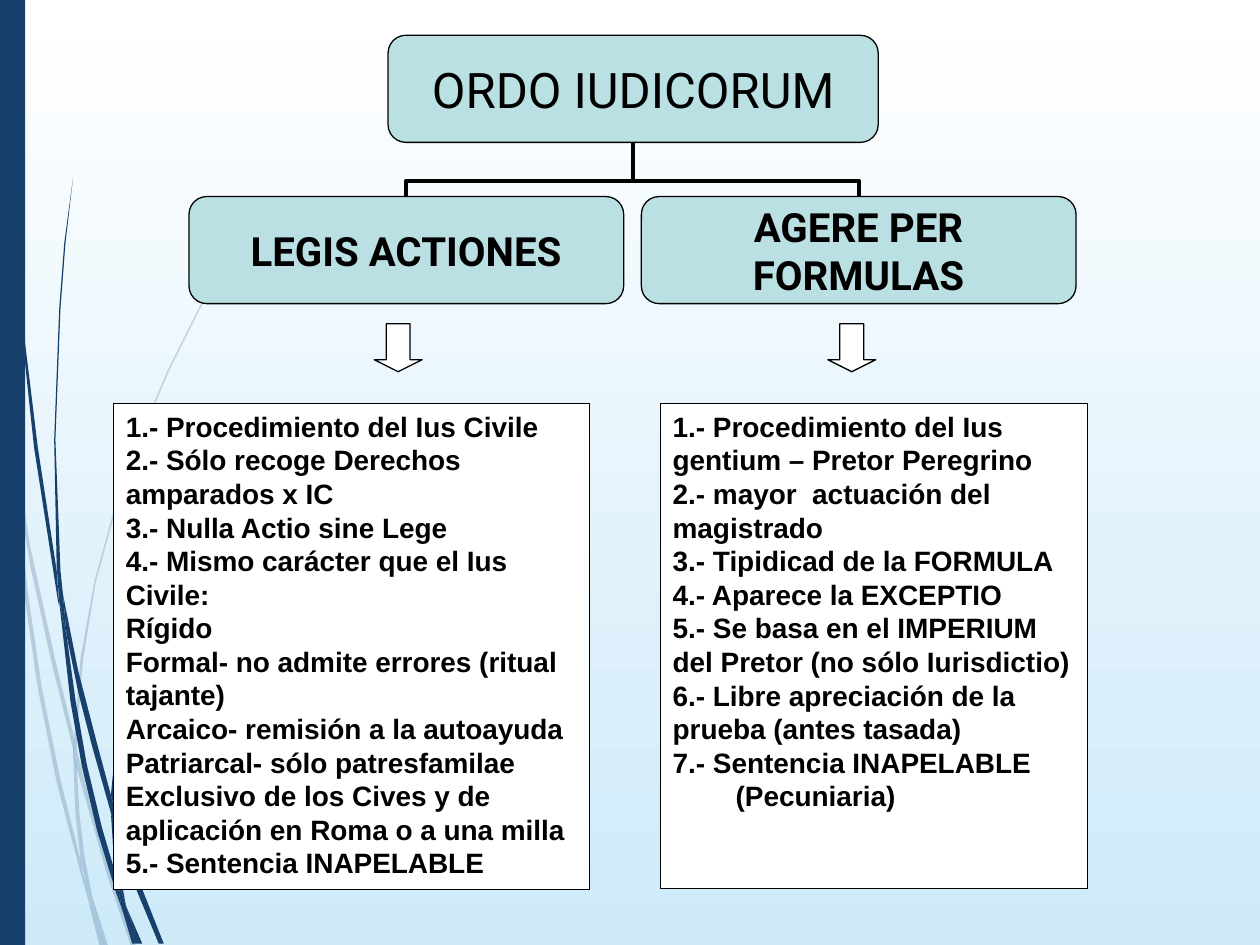
"""Build the Ordo Iudicorum slide: a two-branch chart with a list under each branch."""
from lxml import etree
from pptx import Presentation
from pptx import util as u
from pptx.dml import color
from pptx.enum import shapes, text
from pptx.oxml import ns

COLORS = {"navy": "17406D", "teal": "BBE0E3", "white": "FFFFFF", "black": "000000", "sky": "CEEAF9"}
RGB = {name: color.RGBColor.from_string(value) for name, value in COLORS.items()}
KIND = shapes.MSO_SHAPE

deck = Presentation()
deck.slide_width, deck.slide_height = u.Inches(10), u.Inches(7.5)
page = deck.slides.add_slide(deck.slide_layouts[6])

backdrop = page.background.fill
backdrop.gradient()
backdrop.gradient_angle = 270
for stop, name in zip(backdrop.gradient_stops, ("white", "sky")):
    stop.color.rgb = RGB[name]


def add_box(words, kind, area, fill="white", outline="black", size=16, font="Arial", bold=True,
            align=text.PP_ALIGN.LEFT, anchor=text.MSO_ANCHOR.TOP, margins=(0.1, 0.05)):
    box = page.shapes.add_shape(kind, *map(u.Inches, area))
    box.shadow.inherit = False
    box.fill.solid()
    box.fill.fore_color.rgb = RGB[fill]
    if outline:
        box.line.color.rgb = RGB[outline]
        box.line.width = u.Pt(0.75)
    else:
        box.line.fill.background()
    frame = box.text_frame
    frame.word_wrap = True
    frame.vertical_anchor = anchor
    frame.margin_left = frame.margin_right = u.Inches(margins[0])
    frame.margin_top = frame.margin_bottom = u.Inches(margins[1])
    for index, line in enumerate(words):
        para = frame.paragraphs[0] if index == 0 else frame.add_paragraph()
        para.alignment = align
        span = para.add_run()
        span.text = line
        span.font.size, span.font.name, span.font.bold = u.Pt(size), font, bold
        span.font.color.rgb = RGB["black"]
    return box


def add_ribbon(points, opacity):
    corners = [(u.Inches(x), u.Inches(y)) for x, y in points]
    builder = page.shapes.build_freeform(*corners[0])
    builder.add_line_segments(corners[1:], close=True)
    ribbon = builder.convert_to_shape()
    ribbon.shadow.inherit = False
    ribbon.line.fill.background()
    ribbon.fill.solid()
    ribbon.fill.fore_color.rgb = RGB["navy"]
    if opacity < 100:
        tint = ribbon._element.spPr.find(ns.qn("a:solidFill"))[0]
        etree.SubElement(tint, ns.qn("a:alpha"), val=str(opacity * 1000))


pale_ribbons = [
    [(0, 2.82), (0.06, 3.22), (0.08, 3.5), (0.07, 3.44), (0, 2.99)],
    [(0.1, 3.45), (0.24, 4.34), (0.43, 5.2), (0.59, 5.86), (0.59, 5.99), (0.4, 5.22), (0.24, 4.49), (0.12, 3.76)],
    [(0.61, 5.96), (0.64, 6.07), (0.75, 6.5), (0.88, 6.92), (1.08, 7.51), (1.04, 7.51), (0.85, 6.94), (0.61, 6.1)],
    [(0.73, 7.11), (0.86, 7.51), (0.83, 7.51)],
    [(0.08, 3.5), (0.12, 3.76), (0.22, 4.69), (0.33, 5.45), (0.48, 6.19), (0.64, 6.83), (0.69, 7.07),
     (0.7, 7.14), (0.64, 6.93), (0.45, 6.21), (0.3, 5.46), (0.19, 4.7)],
    [(0.58, 5.99), (0.61, 6.08), (0.63, 6.46), (0.67, 6.79), (0.73, 7.11), (0.67, 6.92), (0.64, 6.83), (0.6, 6.46)],
    [(0.59, 5.86), (0.59, 5.84), (0.64, 5.22), (0.75, 4.61), (0.91, 4.03), (1.1, 3.48), (1.33, 2.94), (1.58, 2.44),
     (1.86, 1.97), (2.17, 1.53), (1.87, 1.98), (1.59, 2.45), (1.34, 2.95), (1.11, 3.49), (0.92, 4.04),
     (0.76, 4.62), (0.66, 5.23), (0.61, 5.84), (0.61, 5.96)],
    [(0.7, 7.14), (0.82, 7.51), (0.79, 7.51)],
    [(0.59, 5.86), (0.61, 5.96), (0.61, 6.1), (0.58, 5.99)],
    [(0.65, 6.83), (0.67, 6.92), (0.73, 7.11), (0.83, 7.51), (0.82, 7.51), (0.7, 7.14)],
]
dark_ribbons = [
    [(0.02, 0), (0.03, 0), (0.04, 0.48), (0.06, 1.09), (0.15, 2.32), (0.3, 3.55), (0.45, 4.53), (0.47, 4.81),
     (0.46, 4.77), (0.27, 3.55), (0.14, 2.33), (0.05, 1.1), (0.03, 0.48)],
    [(0.5, 4.72), (0.62, 5.32), (0.77, 5.9), (0.88, 6.31), (0.88, 6.45), (0.73, 5.92), (0.62, 5.49), (0.53, 5.05)],
    [(0.91, 6.41), (0.94, 6.49), (1.13, 7.06), (1.3, 7.49), (1.26, 7.49), (1.09, 7.08), (0.91, 6.56)],
    [(0.47, 4.77), (0.53, 5.05), (0.6, 5.56), (0.69, 6.07), (0.81, 6.57), (0.91, 6.91), (0.97, 7.22),
     (0.92, 7.08), (0.77, 6.59), (0.65, 6.08), (0.56, 5.57)],
    [(0.49, 4.72), (0.45, 4.49), (0.43, 3.49), (0.47, 2.45), (0.51, 1.93), (0.58, 1.41), (0.52, 1.93),
     (0.48, 2.45), (0.44, 3.49), (0.48, 4.53), (0.5, 4.72)],
    [(1, 7.19), (1.13, 7.49), (1.1, 7.49)],
    [(0.45, 4.49), (0.5, 4.72), (0.53, 5.05), (0.47, 4.77)],
    [(0.88, 6.31), (0.92, 5.91), (1.01, 5.51), (1.14, 5.11), (1.29, 4.74), (1.48, 4.38), (1.68, 4.05),
     (1.91, 3.73), (2.16, 3.44), (1.91, 3.74), (1.69, 4.06), (1.49, 4.4), (1.31, 4.76), (1.16, 5.13),
     (1.03, 5.52), (0.94, 5.92), (0.91, 6.33), (0.91, 6.41)],
    [(0.97, 7.22), (1.08, 7.49), (1.05, 7.49)],
    [(0.88, 6.45), (0.91, 6.56), (0.94, 6.86), (1, 7.19), (0.91, 6.91)],
    [(0.88, 6.31), (0.91, 6.41), (0.91, 6.56), (0.88, 6.45)],
    [(0.91, 6.91), (1, 7.19), (1.1, 7.49), (1.08, 7.49), (0.97, 7.22)],
]
for ribbons, opacity in ((pale_ribbons, 20), (dark_ribbons, 100)):
    for points in ribbons:
        add_ribbon(points, opacity)
add_box([], KIND.RECTANGLE, (0, 0, 0.2, 7.5), fill="navy", outline=None)

node_format = dict(fill="teal", font="Roboto", align=text.PP_ALIGN.CENTER,
                   anchor=text.MSO_ANCHOR.MIDDLE, margins=(0.05, 0.03))
root = add_box(["ORDO IUDICORUM"], KIND.ROUNDED_RECTANGLE, (3.08, 0.28, 3.89, 0.85),
               size=28, bold=False, **node_format)

branches = [
    ("LEGIS ACTIONES", 1.5, 2.97, (0.9, 3.2, 3.78, 3.86), [
        "1.- Procedimiento del Ius Civile",
        "2.- Sólo recoge Derechos amparados x IC",
        "3.- Nulla Actio sine Lege",
        "4.- Mismo carácter que el Ius Civile:",
        "Rígido",
        "Formal- no admite errores (ritual tajante)",
        "Arcaico- remisión a la autoayuda",
        "Patriarcal- sólo patresfamilae",
        "Exclusivo de los Cives y de aplicación en Roma o a una milla",
        "5.- Sentencia INAPELABLE"]),
    ("AGERE PER FORMULAS", 5.09, 6.57, (5.24, 3.2, 3.39, 3.85), [
        "1.- Procedimiento del Ius gentium – Pretor Peregrino",
        "2.- mayor  actuación del magistrado",
        "3.- Tipidicad de la FORMULA",
        "4.- Aparece la EXCEPTIO",
        "5.- Se basa en el IMPERIUM del Pretor (no sólo Iurisdictio)",
        "6.- Libre apreciación de la prueba (antes tasada)",
        "7.- Sentencia INAPELABLE",
        "(Pecuniaria)"]),
]
for name, node_left, arrow_left, list_area, items in branches:
    node = add_box([name], KIND.ROUNDED_RECTANGLE, (node_left, 1.56, 3.45, 0.85), size=23, **node_format)
    add_box([], KIND.DOWN_ARROW, (arrow_left, 2.57, 0.38, 0.38)).adjustments[1] = 0.25
    listing = add_box(items, KIND.RECTANGLE, list_area)

    node_x, root_x = node.left + node.width // 2, root.left + root.width // 2
    root_bottom = root.top + root.height
    link = page.shapes.add_connector(shapes.MSO_CONNECTOR.ELBOW, node_x, node.top, root_x, root_bottom)
    link.begin_connect(node, 0)
    link.end_connect(root, 2)
    link.line.color.rgb = RGB["black"]
    link.line.width = u.Pt(2.25)
    rise, reach = node.top - root_bottom, abs(root_x - node_x)
    link.left, link.top = (node_x + root_x - rise) // 2, (node.top + root_bottom - reach) // 2
    link.width, link.height = rise, reach
    properties = link._element.spPr
    frame = properties.find(ns.qn("a:xfrm"))
    on_right = node_x > root_x
    frame.set("rot", str((90 if on_right else 270) * 60000))
    frame.set("flipH", "1" if on_right else "0")
    frame.set("flipV", "0")
    guides = properties.find(ns.qn("a:prstGeom")).get_or_add_avLst()
    etree.SubElement(guides, ns.qn("a:gd"), name="adj1", fmla="val 29500")
    etree.SubElement(properties, ns.qn("a:effectLst"))

listing.text_frame.paragraphs[-1]._p.get_or_add_pPr().set("marL", str(u.Inches(0.5)))

deck.save("out.pptx")
